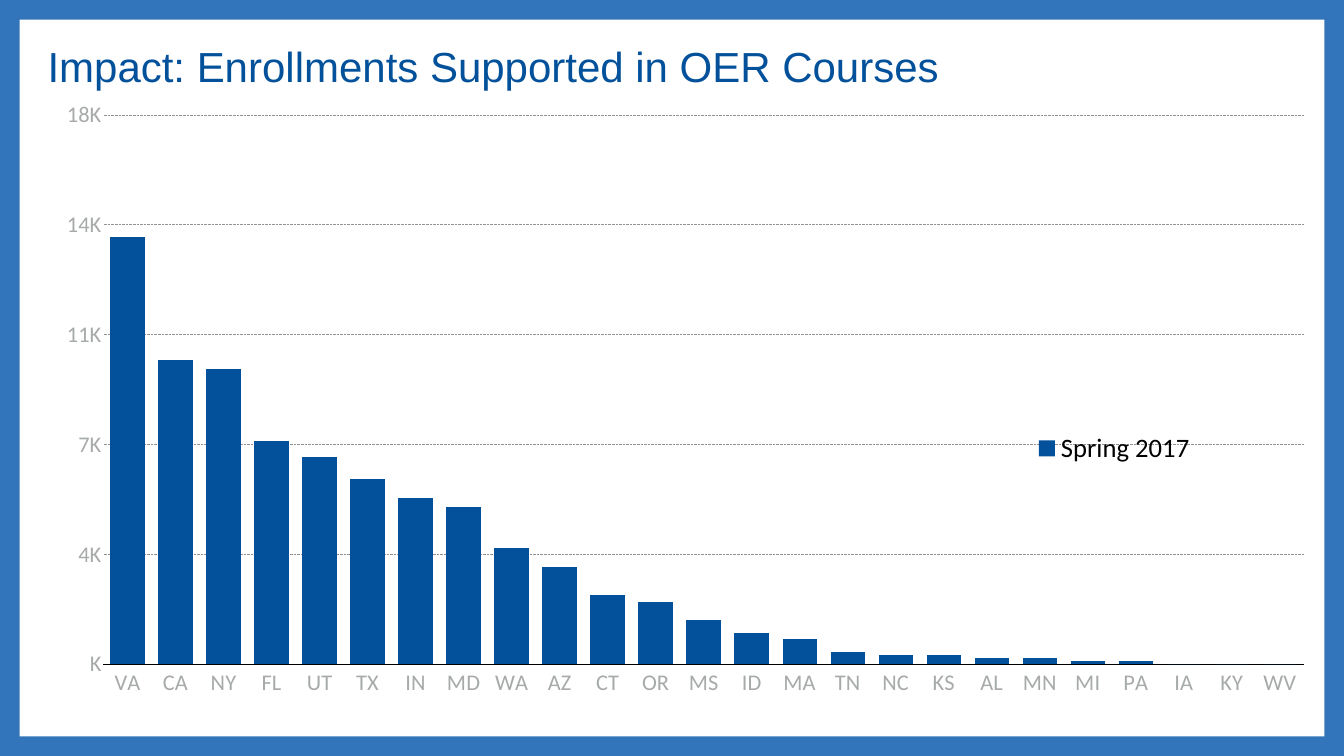
from lxml.etree import SubElement
from pptx import Presentation
from pptx.chart.data import CategoryChartData as ChartData
from pptx.dml.color import RGBColor
from pptx.enum.chart import XL_CHART_TYPE as ChartType
from pptx.enum.chart import XL_LEGEND_POSITION as LegendPosition
from pptx.enum.chart import XL_TICK_LABEL_POSITION as LabelPosition
from pptx.enum.chart import XL_TICK_MARK as TickMark
from pptx.enum.dml import MSO_LINE_DASH_STYLE as Dash
from pptx.enum.shapes import MSO_SHAPE as Shape
from pptx.enum.text import MSO_ANCHOR as Anchor
from pptx.enum.text import PP_ALIGN as Align
from pptx.oxml.ns import qn
from pptx.util import Inches, Pt

FRAME_BLUE = RGBColor(0x33, 0x75, 0xBB)
DEEP_BLUE = RGBColor(0x02, 0x51, 0x9A)
WHITE = RGBColor(0xFF, 0xFF, 0xFF)
BLACK = RGBColor(0, 0, 0)
LABEL_GREY = RGBColor(0xA6, 0xAA, 0xA9)
GRID_GREY = RGBColor(0x92, 0x92, 0x92)

ENROLLMENTS = {
    "VA": 13600, "CA": 9700, "NY": 9400, "FL": 7100, "UT": 6600,
    "TX": 5900, "IN": 5300, "MD": 5000, "WA": 3700, "AZ": 3100,
    "CT": 2200, "OR": 2000, "MS": 1400, "ID": 1000, "MA": 800,
    "TN": 400, "NC": 300, "KS": 300, "AL": 200, "MN": 200,
    "MI": 100, "PA": 100, "IA": 0, "KY": 0, "WV": 0,
}


def write_text(box, text, *, size, font, color, align, inset):
    frame = box.text_frame
    frame.word_wrap = False
    frame.vertical_anchor = Anchor.MIDDLE
    frame.margin_left = frame.margin_right = inset
    frame.margin_top = frame.margin_bottom = inset
    para = frame.paragraphs[0]
    para.alignment = align
    span = para.add_run()
    span.text = text
    span.font.size = Pt(size)
    span.font.name = font
    span.font.color.rgb = color


def set_layout(parent, position, **shares):
    for old in parent.findall(qn("c:layout")):
        parent.remove(old)
    layout = SubElement(parent, qn("c:layout"))
    parent.insert(position, layout)
    manual = SubElement(layout, qn("c:manualLayout"))
    if position == 0:
        SubElement(manual, qn("c:layoutTarget")).set("val", "inner")
    for axis in "xy":
        SubElement(manual, qn(f"c:{axis}Mode")).set("val", "edge")
    for key, share in shares.items():
        SubElement(manual, qn(f"c:{key}")).set("val", str(share))


deck = Presentation()
deck.slide_width, deck.slide_height = Inches(26.67), Inches(15)
width, height = deck.slide_width, deck.slide_height
page = deck.slides.add_slide(deck.slide_layouts[5])

border = Inches(0.39)
for margin, color in ((0, FRAME_BLUE), (border, WHITE)):
    panel = page.shapes.add_shape(
        Shape.RECTANGLE, margin, margin, width - 2 * margin, height - 2 * margin)
    panel.shadow.inherit = False
    panel.fill.solid()
    panel.fill.fore_color.rgb = color
    panel.line.fill.background()

title = page.shapes.title
title.left, title.top = Inches(0.88), Inches(0.75)
title.width, title.height = Inches(17.82), Inches(1.11)
write_text(title, "Impact: Enrollments Supported in OER Courses", size=60,
           font="Arial", color=DEEP_BLUE, align=Align.CENTER, inset=Inches(0.06))
page.shapes._spTree.append(title._element)

data = ChartData()
data.categories = list(ENROLLMENTS)
data.add_series("Spring 2017", list(ENROLLMENTS.values()))
chart = page.shapes.add_chart(
    ChartType.COLUMN_STACKED, Inches(0.8), Inches(1.79),
    Inches(25.08), Inches(12.25), data).chart
chart.has_title = False
chart.font.name = "Calibri"
chart.font.size = Pt(32)
chart.font.color.rgb = BLACK

plot = chart.plots[0]
plot.gap_width, plot.overlap, plot.vary_by_categories = 40, 100, False
bars = plot.series[0].format.fill
bars.solid()
bars.fore_color.rgb = DEEP_BLUE

for axis in (chart.category_axis, chart.value_axis):
    axis.major_tick_mark = axis.minor_tick_mark = TickMark.NONE
    axis.tick_labels.font.name = "Calibri"
    axis.tick_labels.font.size = Pt(32)
    axis.tick_labels.font.color.rgb = LABEL_GREY

states = chart.category_axis
states.tick_label_position = LabelPosition.LOW
states.format.line.color.rgb = BLACK
states.format.line.width = Pt(1)

counts = chart.value_axis
counts.minimum_scale, counts.maximum_scale, counts.major_unit = 0, 17500, 3500
counts.tick_labels.number_format = '[<1000000]#,###,"K";#,###.#,,"M"'
counts.tick_labels.number_format_is_linked = False
counts.format.line.fill.background()
grid = counts.major_gridlines.format.line
grid.color.rgb = GRID_GREY
grid.width = Pt(1)
grid.dash_style = Dash.ROUND_DOT

chart.has_legend = True
legend = chart.legend
legend.position = LegendPosition.RIGHT
legend.include_in_layout = False
legend.font.name = "Calibri"
legend.font.size = Pt(38)
legend.font.color.rgb = BLACK
chart._chartSpace.chart.find(qn("c:legend")).find(qn("c:overlay")).set("val", "1")

set_layout(chart._chartSpace.chart.plotArea, 0, x=0.05, y=0.04, w=0.95, h=0.89)
set_layout(legend._element, 1, x=0.78, y=0.55, w=0.14, h=0.06)

deck.save("out.pptx")
